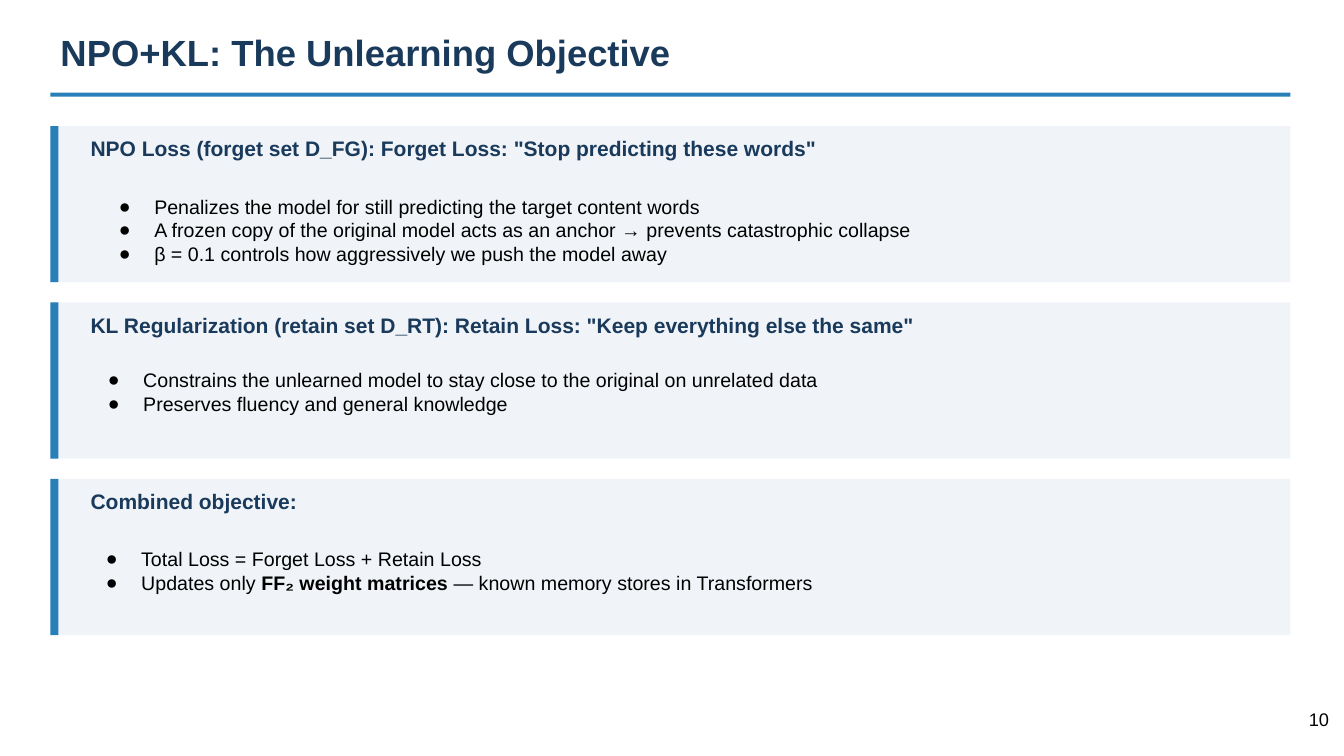
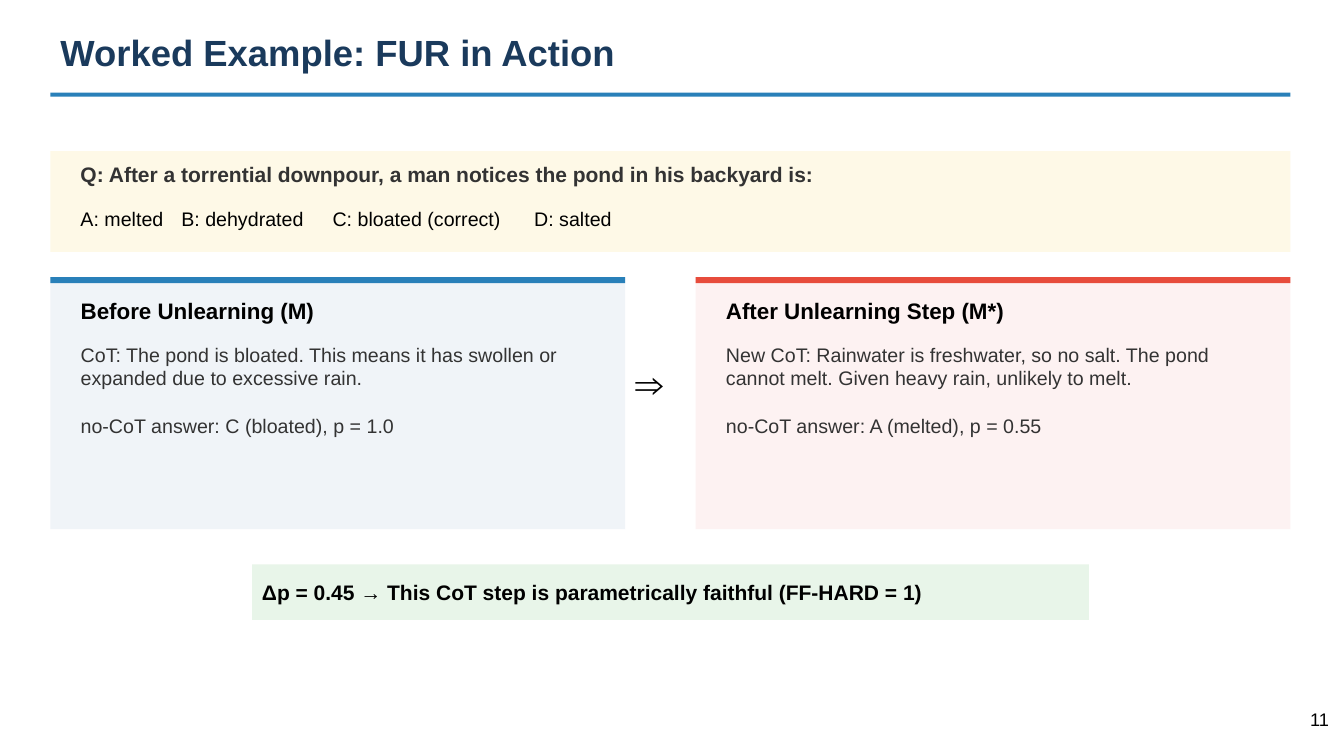
from lxml.etree import SubElement
from pptx import Presentation
from pptx.dml.color import RGBColor
from pptx.enum.shapes import MSO_SHAPE
from pptx.enum.text import MSO_ANCHOR, MSO_AUTO_SIZE, PP_ALIGN
from pptx.oxml.ns import qn
from pptx.util import Inches, Pt


class Theme:
    font = "Arial"
    navy, blue, red = "1A3A5C", "2980B9", "E74C3C"
    black, grey = "000000", "333333"
    mist, rose, cream, mint = "F0F4F8", "FDF2F2", "FEF9E7", "E8F5E9"
    title, arrow, head, lead, body, page = 26, 28, 16, 15, 14, 13


CELL = Inches(0.1)  # side of one grid square
LEFT, WIDE = 5, 123  # content column, in squares
PAD = 1  # text inset, in squares


def box(slide, spot, fill):
    """Add a plain filled rectangle; spot is left, top, width, height in squares."""
    rect = slide.shapes.add_shape(MSO_SHAPE.RECTANGLE, *[int(n * CELL) for n in spot])
    rect.shadow.inherit = False
    rect.fill.solid()
    rect.fill.fore_color.rgb = RGBColor.from_string(fill)
    rect.line.fill.background()


def write(slide, spot, *lines, hold=None, size=Theme.body, color=Theme.black,
          bold=False, align=PP_ALIGN.LEFT, anchor=MSO_ANCHOR.TOP,
          inset=PAD / 2, gap=0, bullet=None, tabs=()):
    """Write paragraphs into placeholder number hold, or a new text box.

    Text between bars (|) takes the opposite weight.
    """
    place = [int(n * CELL) for n in spot]
    if hold is None:
        shape = slide.shapes.add_textbox(*place)
    else:
        shape = slide.placeholders[hold]
        shape.left, shape.top, shape.width, shape.height = place
        shape.element.getparent().append(shape.element)  # bring to front
    frame = shape.text_frame
    frame.word_wrap, frame.auto_size = True, MSO_AUTO_SIZE.NONE
    frame.vertical_anchor = anchor
    frame.margin_left = frame.margin_right = int(PAD * CELL)
    frame.margin_top = frame.margin_bottom = int(inset * CELL)
    for row, line in enumerate(lines):
        para = frame.add_paragraph() if row else frame.paragraphs[0]
        para.alignment = align
        para.space_before, para.space_after = Pt(gap if row else 0), Pt(0)
        props = para._p.get_or_add_pPr()
        props.set("marL", str(Inches(0.5) if bullet else 0))
        props.set("indent", str(Inches(-0.35) if bullet else 0))
        if bullet:
            tint = SubElement(props, qn("a:buClr"))
            SubElement(tint, qn("a:srgbClr")).set("val", color)
            SubElement(props, qn("a:buFont")).set("typeface", Theme.font)
            SubElement(props, qn("a:buChar")).set("char", bullet)
        else:
            SubElement(props, qn("a:buNone"))
        if tabs:
            stops = SubElement(props, qn("a:tabLst"))
            for stop in tabs:
                tab = SubElement(stops, qn("a:tab"))
                tab.set("pos", str(int(stop * CELL)))
                tab.set("algn", "l")
        for part, words in enumerate(line.split("|")):
            run = para.add_run()
            run.text = words
            run.font.name, run.font.size = Theme.font, Pt(size)
            run.font.bold = bold != bool(part % 2)
            run.font.color.rgb = RGBColor.from_string(color)


deck = Presentation()
deck.slide_width, deck.slide_height = Inches(13.33), Inches(7.5)
layout = deck.slide_layouts.get_by_name("Comparison")

# Shared frame: title, rule and page number
slides = []
for page, title in enumerate(["NPO+KL: The Unlearning Objective",
                              "Worked Example: FUR in Action"], 10):
    slide = deck.slides.add_slide(layout)
    write(slide, (LEFT, 2.5, WIDE, 6.5), title, hold=0,
          size=Theme.title, color=Theme.navy, bold=True)
    box(slide, (LEFT, 9.2, WIDE, 0.4), Theme.blue)
    write(slide, (124.8, 69.3, 8, 5.7), str(page), size=Theme.page,
          align=PP_ALIGN.RIGHT, inset=PAD)
    slides.append(slide)
goal, case = slides

# Objective: three stacked cards, each with a heading and a list
cards = [
    ('NPO Loss (forget set D_FG): Forget Loss: "Stop predicting these words"',
     (9.3, 18.8),
     ["Penalizes the model for still predicting the target content words",
      "A frozen copy of the original model acts as an anchor → prevents catastrophic collapse",
      "β = 0.1 controls how aggressively we push the model away"]),
    ('KL Regularization (retain set D_RT): Retain Loss: "Keep everything else the same"',
     (8.2, 36),
     ["Constrains the unlearned model to stay close to the original on unrelated data",
      "Preserves fluency and general knowledge"]),
    ("Combined objective:",
     (8, 53.8),
     ["Total Loss = Forget Loss + Retain Loss",
      "Updates only |FF₂ weight matrices| — known memory stores in Transformers"]),
]
high, step = 15.5, 17.5
for row, (head, start, points) in enumerate(cards):
    top = 12.5 + row * step
    box(goal, (LEFT, top, WIDE, high), Theme.mist)
    box(goal, (LEFT, top, 0.8, high), Theme.blue)
    write(goal, (LEFT + 3, top + 0.5, 117, 3.5), head,
          size=Theme.lead, color=Theme.navy, bold=True)
    write(goal, (*start, 117, 7.2), *points, hold=row + 1, bullet="●")
spare = goal.placeholders[4].element
spare.getparent().remove(spare)

# Example: question band
box(case, (LEFT, 15, WIDE, 10), Theme.cream)
write(case, (LEFT + 2, 15.5, WIDE - 4, 5),
      "Q: After a torrential downpour, a man notices the pond in his backyard is:",
      size=Theme.lead, color=Theme.grey, bold=True)
write(case, (LEFT + 2, 20, WIDE - 4, 4),
      "A: melted\tB: dehydrated\tC: bloated (correct)\tD: salted",
      tabs=(10.4, 24.7, 43.5))

# Example: before and after panels
panels = [
    (LEFT, 57, Theme.mist, Theme.blue, "Before Unlearning (M)",
     "CoT: The pond is bloated. This means it has swollen or expanded due to excessive rain.",
     "no-CoT answer: C (bloated), p = 1.0"),
    (69, 59, Theme.rose, Theme.red, "After Unlearning Step (M*)",
     "New CoT: Rainwater is freshwater, so no salt. The pond cannot melt. Given heavy rain, unlikely to melt.",
     "no-CoT answer: A (melted), p = 0.55"),
]
top = 27.5
for side, (left, wide, fill, edge, head, *lines) in enumerate(panels):
    box(case, (left, top, wide, 25), fill)
    box(case, (left, top, wide, 0.6), edge)
    write(case, (left + 2, top + 1.5, wide - 4, 4), head,
          hold=2 * side + 1, size=Theme.head, bold=True)
    write(case, (left + 2, top + 6, wide - 4, 16), *lines,
          hold=2 * side + 2, color=Theme.grey, gap=17)
write(case, (62, 35, 6, 6), "⇒", size=Theme.arrow, anchor=MSO_ANCHOR.MIDDLE)

# Example: verdict
verdict = (25, 56, 83, 5.5)
box(case, verdict, Theme.mint)
write(case, verdict, "Δp = 0.45 → This CoT step is parametrically faithful (FF-HARD = 1)",
      size=Theme.lead, bold=True, anchor=MSO_ANCHOR.MIDDLE)

deck.save("out.pptx")
